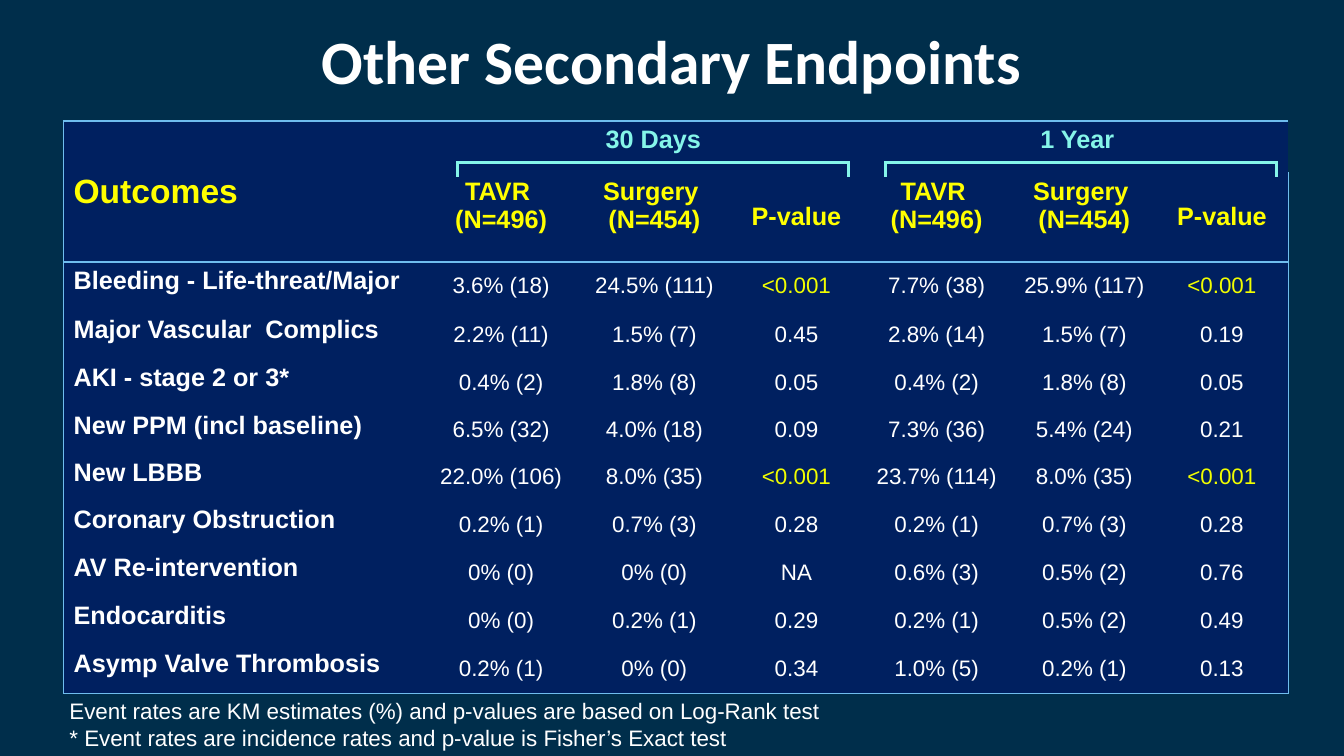
from lxml import etree
from pptx import Presentation
from pptx.dml.color import RGBColor
from pptx.enum.shapes import MSO_CONNECTOR
from pptx.enum.text import MSO_ANCHOR, MSO_AUTO_SIZE, PP_ALIGN
from pptx.oxml.ns import qn
from pptx.util import Inches, Pt

STRAIGHT = MSO_CONNECTOR.STRAIGHT
TOP, MIDDLE = MSO_ANCHOR.TOP, MSO_ANCHOR.MIDDLE
LEFT, CENTER = PP_ALIGN.LEFT, PP_ALIGN.CENTER
FIT_SHAPE = MSO_AUTO_SIZE.SHAPE_TO_FIT_TEXT

BACKGROUND = RGBColor(0x00, 0x2E, 0x4B)
NAVY = RGBColor(0x00, 0x20, 0x60)
BORDER = RGBColor(0x6F, 0xBD, 0xEE)
AQUA = RGBColor(0x85, 0xF5, 0xE9)
YELLOW = RGBColor(0xFF, 0xFF, 0x00)
SIGNIFICANT = RGBColor(0xF1, 0xFE, 0x00)
WHITE = RGBColor(0xFF, 0xFF, 0xFF)

COL_WIDTHS = [3.6, 1.48, 1.56, 1.26, 1.52, 1.41, 1.32]
ROW_HEIGHTS = [0.51, 0.89] + [0.48] * 2 + [0.47] * 4 + [0.48] * 3
ARMS = ["TAVR \n(N=496)", "Surgery \n(N=454)", "P-value"]
OUTCOMES = [
    ("Bleeding - Life-threat/Major", "3.6% (18)", "24.5% (111)", "<0.001",
     "7.7% (38)", "25.9% (117)", "<0.001"),
    ("Major Vascular  Complics", "2.2% (11)", "1.5% (7)", "0.45",
     "2.8% (14)", "1.5% (7)", "0.19"),
    ("AKI - stage 2 or 3*", "0.4% (2)", "1.8% (8)", "0.05",
     "0.4% (2)", "1.8% (8)", "0.05"),
    ("New PPM (incl baseline)", "6.5% (32)", "4.0% (18)", "0.09",
     "7.3% (36)", "5.4% (24)", "0.21"),
    ("New LBBB", "22.0% (106)", "8.0% (35)", "<0.001",
     "23.7% (114)", "8.0% (35)", "<0.001"),
    ("Coronary Obstruction", "0.2% (1)", "0.7% (3)", "0.28",
     "0.2% (1)", "0.7% (3)", "0.28"),
    ("AV Re-intervention", "0% (0)", "0% (0)", "NA",
     "0.6% (3)", "0.5% (2)", "0.76"),
    ("Endocarditis", "0% (0)", "0.2% (1)", "0.29",
     "0.2% (1)", "0.5% (2)", "0.49"),
    ("Asymp Valve Thrombosis", "0.2% (1)", "0% (0)", "0.34",
     "1.0% (5)", "0.2% (1)", "0.13"),
]
FOOTNOTES = ("Event rates are KM estimates (%) and p-values are based on Log-Rank test\n"
             "* Event rates are incidence rates and p-value is Fisher’s Exact test")


def write(tf, text, size, color, bold=False, align=LEFT, font="Arial"):
    """Fill a text frame with evenly formatted paragraphs."""
    tf.text = text
    for p in tf.paragraphs:
        p.alignment = align
        p.font.name, p.font.size, p.font.bold = font, Pt(size), bold
        p.font.color.rgb = color


def set_borders(cell, sides):
    """Draw the named sides of a cell and clear the others."""
    tcPr = cell._tc.get_or_add_tcPr()
    for side in "LRTB":
        ln = etree.SubElement(tcPr, qn(f"a:ln{side}"), w=str(Pt(1)))
        if side in sides:
            fill = etree.SubElement(ln, qn("a:solidFill"))
            etree.SubElement(fill, qn("a:srgbClr"), val=str(BORDER))
        else:
            etree.SubElement(ln, qn("a:noFill"))


def style_grid(table):
    """Size the table and frame its header and body."""
    table.first_row = table.horz_banding = False
    for col, width in zip(table.columns, COL_WIDTHS):
        col.width = Inches(width)
    for row, height in zip(table.rows, ROW_HEIGHTS):
        row.height = Inches(height)
    last_row, last_col = len(ROW_HEIGHTS) - 1, len(COL_WIDTHS) - 1
    for r in range(last_row + 1):
        for c in range(last_col + 1):
            edges = {"L": c == 0, "R": c == last_col,
                     "T": r in (0, 2), "B": r in (1, last_row)}
            cell = table.cell(r, c)
            set_borders(cell, [side for side, drawn in edges.items() if drawn])
            cell.fill.solid()
            cell.fill.fore_color.rgb = NAVY


def add_header(table):
    """Write the outcome heading, the periods and the study arms."""
    corner = table.cell(0, 0)
    corner.merge(table.cell(1, 0))
    corner.vertical_anchor = MIDDLE
    write(corner.text_frame, "Outcomes", 24, YELLOW, True)
    for first, period, inset in ((1, "30 Days", 0.3), (4, "1 Year", 0.16)):
        cell = table.cell(0, first)
        cell.merge(table.cell(0, first + 2))
        cell.margin_left = Inches(inset)
        write(cell.text_frame, period, 18, AQUA, True, CENTER)
        for i, arm in enumerate(ARMS):
            cell = table.cell(1, first + i)
            cell.vertical_anchor = MIDDLE if arm == "P-value" else TOP
            write(cell.text_frame, arm, 18, YELLOW, True, CENTER)


def add_outcomes(s, left, top):
    """Place the outcomes table."""
    shape = s.shapes.add_table(len(ROW_HEIGHTS), len(COL_WIDTHS), Inches(left), Inches(top),
                               Inches(sum(COL_WIDTHS)), Inches(sum(ROW_HEIGHTS)))
    table = shape.table
    style_grid(table)
    add_header(table)
    for r, (name, *values) in enumerate(OUTCOMES, 2):
        write(table.cell(r, 0).text_frame, name, 18, WHITE, True)
        for c, value in enumerate(values, 1):
            cell = table.cell(r, c)
            cell.vertical_anchor = MIDDLE
            color = SIGNIFICANT if value.startswith("<") else WHITE
            write(cell.text_frame, value, 16, color, align=CENTER)


def add_bracket(s, left, top, width, height):
    """Group a bar with a short drop at each end."""
    group = s.shapes.add_group_shape()
    right, inner = left + width, 0.01
    for x1, y1, x2, y2 in (
            (left, top + inner, right, top + inner),
            (left + inner, top, left + inner, top + height),
            (right - inner, top, right - inner, top + height)):
        line = group.shapes.add_connector(STRAIGHT, Inches(x1), Inches(y1), Inches(x2), Inches(y2))
        line.line.color.rgb = AQUA
        line.line.width = Pt(2.25)
        etree.SubElement(line._element.spPr, qn("a:effectLst"))


def add_title(s, left, top, width, height):
    """Place the slide title."""
    title = s.shapes.title
    title.left, title.top = Inches(left), Inches(top)
    title.width, title.height = Inches(width), Inches(height)
    title.text_frame.vertical_anchor = MIDDLE
    write(title.text_frame, "Other Secondary Endpoints", 44, WHITE, True, CENTER, "Calibri")


def add_footnotes(s, left, top, width, height):
    """Place the notes under the table."""
    box = s.shapes.add_textbox(Inches(left), Inches(top), Inches(width), Inches(height))
    tf = box.text_frame
    tf.word_wrap = False
    tf.auto_size = FIT_SHAPE
    write(tf, FOOTNOTES, 16, WHITE)


def main():
    """Build and save the slide."""
    prs = Presentation()
    prs.slide_width, prs.slide_height = Inches(13.33), Inches(7.5)
    s = prs.slides.add_slide(prs.slide_layouts[5])
    s.background.fill.solid()
    s.background.fill.fore_color.rgb = BACKGROUND
    add_title(s, 0, 0.18, 13.33, 0.83)
    add_outcomes(s, 0.63, 1.2)
    add_footnotes(s, 0.59, 6.87, 7.8, 0.63)
    for left in (4.53, 8.77):
        add_bracket(s, left, 1.6, 3.9, 0.16)
    prs.save("out.pptx")


if __name__ == "__main__":
    main()
